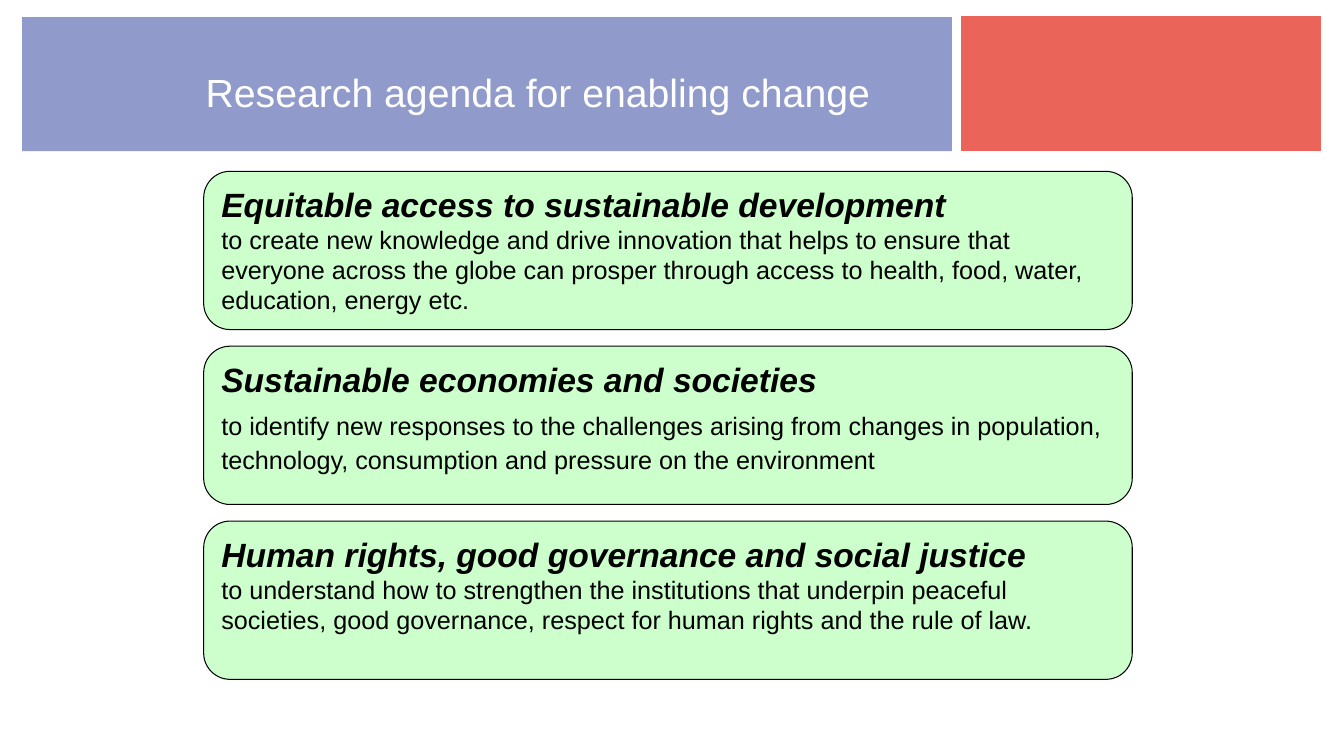
"""Build the slide on the research agenda for enabling change."""
from pptx import Presentation
from pptx.dml.color import RGBColor
from pptx.enum.shapes import MSO_SHAPE
from pptx.enum.text import MSO_ANCHOR, MSO_AUTO_SIZE, PP_ALIGN
from pptx.util import Inches, Pt

RECT, ROUNDED = MSO_SHAPE.RECTANGLE, MSO_SHAPE.ROUNDED_RECTANGLE
TOP, MIDDLE = MSO_ANCHOR.TOP, MSO_ANCHOR.MIDDLE
LEFT = PP_ALIGN.LEFT
NO_FIT = MSO_AUTO_SIZE.NONE
FONT = "Arial"
COLORS = {"red": "EB645A", "blue": "909ACB", "green": "CCFFCC",
          "black": "000000", "white": "FFFFFF"}
THEMES = [
    ("Equitable access to sustainable development",
     "to create new knowledge and drive innovation that helps to ensure that "
     "everyone across the globe can prosper through access to health, food, "
     "water, education, energy etc.", None, 0),
    ("Sustainable economies and societies",
     "to identify new responses to the challenges arising from changes in "
     "population, technology, consumption and pressure on the environment",
     1.1, 6),
    ("Human rights, good governance and social justice",
     "to understand how to strengthen the institutions that underpin peaceful "
     "societies, good governance, respect for human rights and the rule of law.",
     None, 0),
]


def add_box(kind, x, y, w, h, fill, line=None):
    sp = s.shapes.add_shape(kind, Inches(x), Inches(y), Inches(w), Inches(h))
    sp.shadow.inherit = False
    sp.fill.solid()
    sp.fill.fore_color.rgb = RGBColor.from_string(COLORS[fill])
    if line:
        sp.line.color.rgb = RGBColor.from_string(COLORS[line])
        sp.line.width = Pt(0.75)
    else:
        sp.line.fill.background()
    return sp


def add_text(p, text, size, color, strong=False):
    p.alignment = LEFT
    r = p.add_run()
    r.text = text
    r.font.name = FONT
    r.font.size = Pt(size)
    r.font.bold = r.font.italic = strong
    r.font.color.rgb = RGBColor.from_string(COLORS[color])


prs = Presentation()
prs.slide_width, prs.slide_height = Inches(13.33), Inches(7.5)
s = prs.slides.add_slide(prs.slide_layouts[5])

add_box(RECT, 9.54, 0.16, 3.56, 1.33, "red", "red")
add_box(RECT, 0.22, 0.17, 9.22, 1.33, "blue")

title = s.shapes.title
s.shapes._spTree.append(title._element)
title.left, title.top = Inches(1.94), Inches(0.33)
title.width, title.height = Inches(7.14), Inches(1.17)
tf = title.text_frame
tf.word_wrap = True
tf.auto_size = NO_FIT
tf.vertical_anchor = MIDDLE
add_text(tf.paragraphs[0], "Research agenda for enabling change", 28, "white")

for i, (heading, aim, spacing, gap) in enumerate(THEMES):
    card = add_box(ROUNDED, 2.02, 1.7 + i * 1.735, 9.21, 1.57, "green", "black")
    tf = card.text_frame
    tf.word_wrap = True
    tf.vertical_anchor = TOP
    add_text(tf.paragraphs[0], heading, 24, "black", strong=True)
    p = tf.add_paragraph()
    if spacing:
        p.line_spacing = spacing
        p.space_before = p.space_after = Pt(gap)
    add_text(p, aim, 18, "black")

prs.save("out.pptx")
